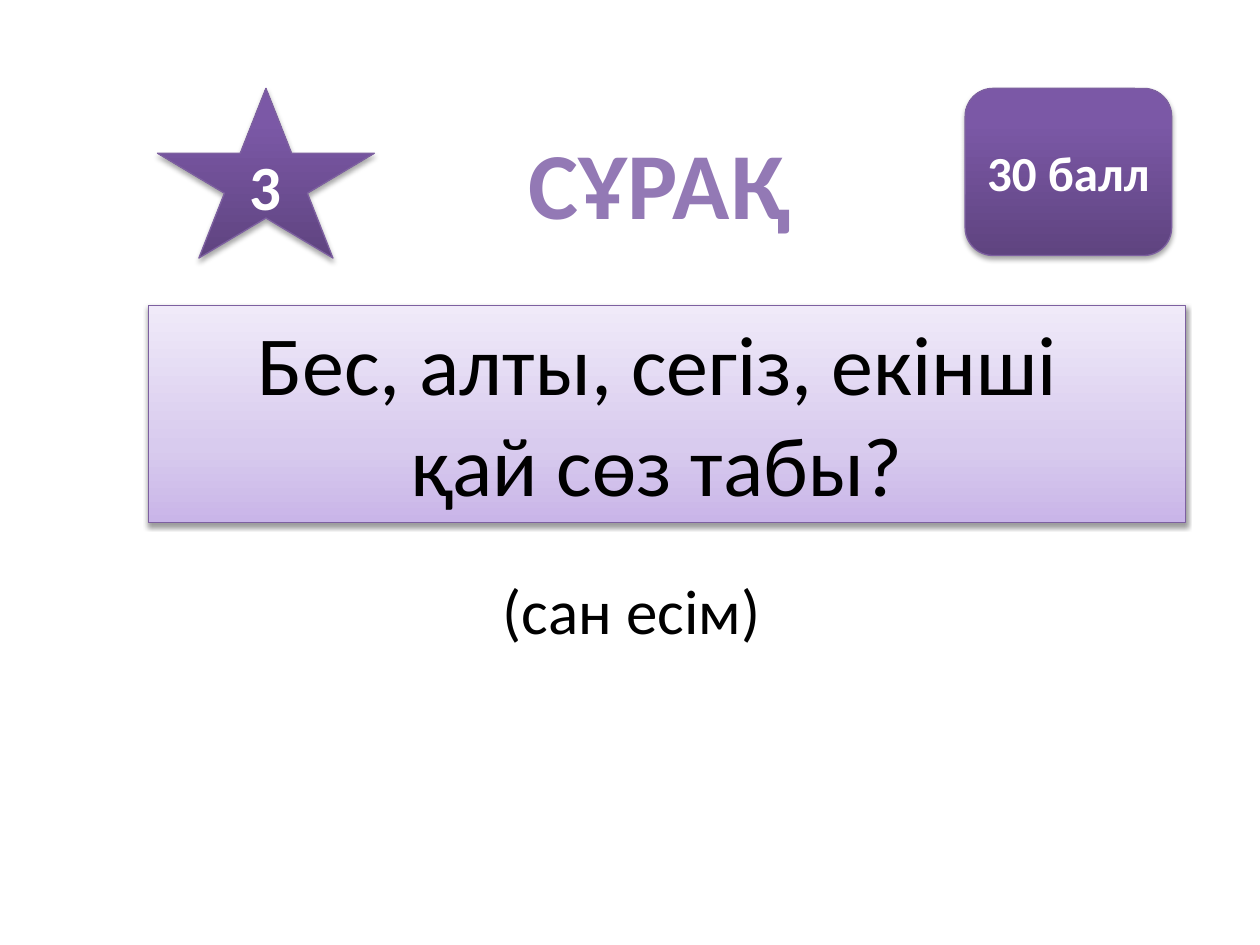
from lxml import etree
from pptx import Presentation
from pptx.dml.color import RGBColor
from pptx.enum import shapes, text
from pptx.oxml import ns
from pptx.util import Pt

COLORS = {
    "black": "000000",
    "white": "FFFFFF",
    "outline": "7D60A0",
    "badge_dark": "5F4480",
    "badge_middle": "7B58A6",
    "badge_light": "7C57A8",
    "panel_dark": "C9B5E8",
    "panel_middle": "D8CBEE",
    "panel_light": "F0EAF9",
    "title_edge": "B099D2",
    "title_middle": "9379B5",
}
BADGE_STOPS = [(0, "badge_dark"), (80, "badge_middle"), (100, "badge_light")]
PANEL_STOPS = [(0, "panel_dark"), (35, "panel_middle"), (100, "panel_light")]
TITLE_STOPS = [(0, "title_edge"), (40, "title_middle"), (68, "title_middle"), (100, "title_edge")]


def add_element(parent, tag, **attributes):
    values = {name: str(value) for name, value in attributes.items()}
    return etree.SubElement(parent, ns.qn(tag), values)


def set_gradient(fill, element, stops, angle):
    fill.gradient()
    fill.gradient_angle = angle
    stop_list = next(element.iter(ns.qn("a:gsLst")))
    for stop in list(stop_list):
        stop_list.remove(stop)
    for position, color in stops:
        stop = add_element(stop_list, "a:gs", pos=position * 1000)
        add_element(stop, "a:srgbClr", val=COLORS[color])


def add_shadow(shape, opacity, distance):
    shape.shadow.inherit = False
    effects = shape._element.spPr.find(ns.qn("a:effectLst"))
    shadow = add_element(effects, "a:outerShdw", blurRad=Pt(3.1), dist=Pt(distance),
                         dir=5400000, rotWithShape=0)
    color = add_element(shadow, "a:srgbClr", val=COLORS["black"])
    add_element(color, "a:alpha", val=opacity * 1000)


def write_text(shape, lines, size, color="black", bold=False, stops=None,
               anchor=text.MSO_ANCHOR.MIDDLE, wrap=True):
    frame = shape.text_frame
    frame.word_wrap = wrap
    frame.vertical_anchor = anchor
    for index, line in enumerate(lines):
        paragraph = frame.add_paragraph() if index else frame.paragraphs[0]
        paragraph.alignment = text.PP_ALIGN.CENTER
        run = paragraph.add_run()
        run.text = line
        run.font.name = "Calibri"
        run.font.size = Pt(size)
        run.font.bold = bold
        if stops:
            set_gradient(run.font.fill, run._r, stops, 270)
        else:
            run.font.color.rgb = RGBColor.from_string(COLORS[color])


def add_panel(slide, kind, box, stops, opacity, distance):
    shape = slide.shapes.add_shape(kind, *map(Pt, box))
    set_gradient(shape.fill, shape._element.spPr, stops, 90)
    shape.line.color.rgb = RGBColor.from_string(COLORS["outline"])
    shape.line.width = Pt(0.75)
    add_shadow(shape, opacity, distance)
    return shape


def add_header(slide, left, top, width, height):
    star_width, points_width = 124, 118
    badges = [
        (shapes.MSO_SHAPE.STAR_5_POINT, (left, top, star_width, height), "3", 36),
        (shapes.MSO_SHAPE.ROUNDED_RECTANGLE,
         (left + width - points_width, top, points_width, height - 1.5), "30 балл", 28),
    ]
    for kind, box, label, size in badges:
        badge = add_panel(slide, kind, box, BADGE_STOPS, 35, 1.8)
        write_text(badge, [label], size, color="white", bold=True)
    title = slide.shapes.add_textbox(Pt(left + 204.5), Pt(top + 17.5), Pt(164), Pt(73))
    write_text(title, ["СҰРАҚ"], 54, bold=True, stops=TITLE_STOPS,
               anchor=text.MSO_ANCHOR.TOP, wrap=False)


def add_question(slide, left, top, width, height):
    panel = add_panel(slide, shapes.MSO_SHAPE.RECTANGLE, (left, top, width, height),
                      PANEL_STOPS, 38, 1.6)
    write_text(panel, ["Бес, алты, сегіз, екінші ", "қай сөз табы? "], 48,
               anchor=text.MSO_ANCHOR.TOP)


def add_answer(slide, left, top, width, height):
    answer = slide.shapes.add_textbox(Pt(left), Pt(top), Pt(width), Pt(height))
    write_text(answer, ["(сан есім)"], 36)


def main():
    presentation = Presentation()
    presentation.slide_width, presentation.slide_height = Pt(720), Pt(540)
    slide = presentation.slides.add_slide(presentation.slide_layouts[6])
    add_question(slide, 85, 174.5, 592.5, 124)
    add_answer(slide, 116, 304, 490, 88)
    add_header(slide, 90, 50.5, 579.5, 97)
    presentation.save("out.pptx")


if __name__ == "__main__":
    main()
